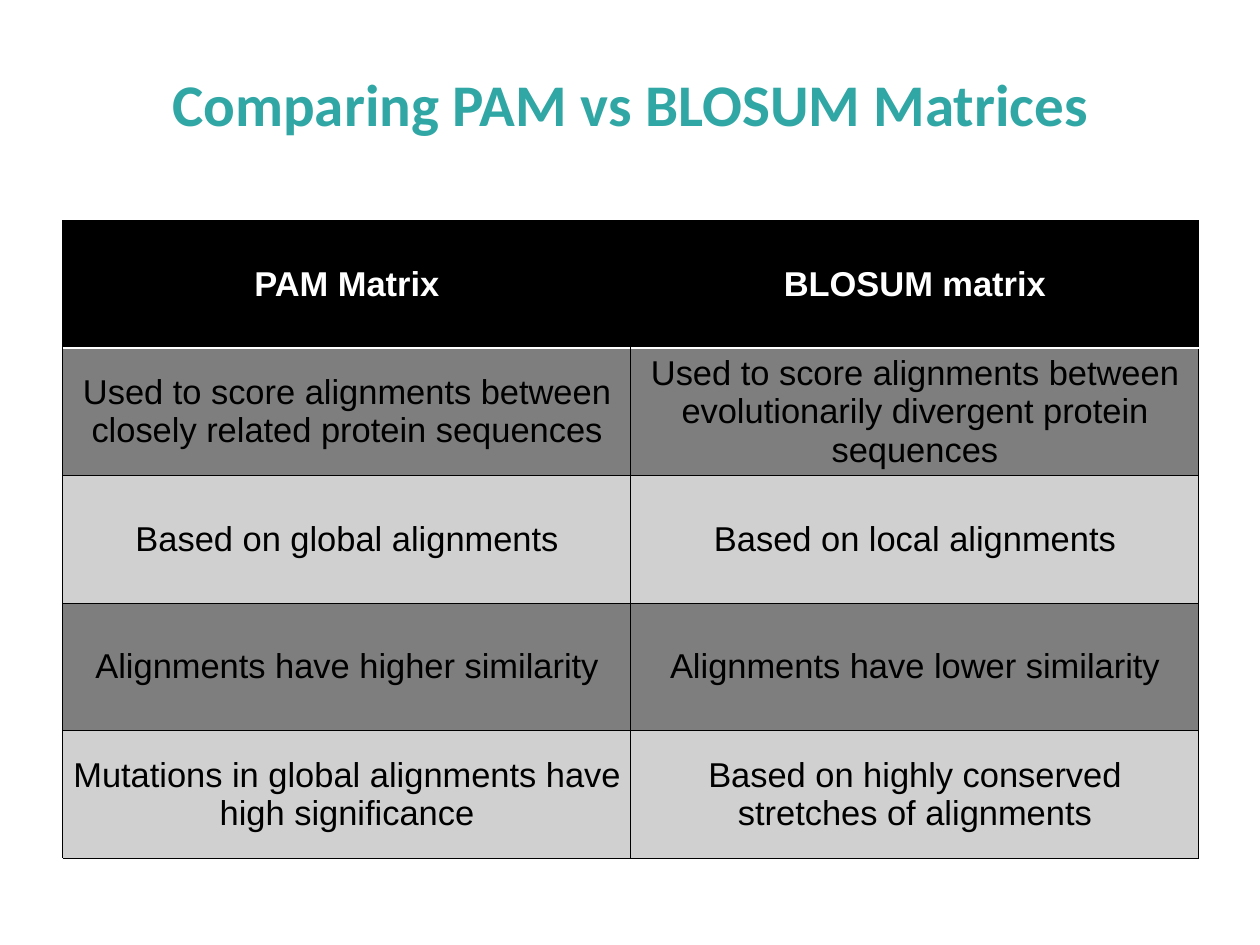
import pptx
import pptx.dml.color
import pptx.enum.text
import pptx.oxml.ns
import pptx.util
from lxml import etree

PX = 9144
COLORS = {
    "teal": "31A7A5",
    "black": "000000",
    "white": "FFFFFF",
    "dark_band": "7E7E7E",
    "light_band": "D0D0D0",
}
ROWS = [
    ("PAM Matrix", "BLOSUM matrix"),
    (
        "Used to score alignments between closely related protein sequences",
        "Used to score alignments between evolutionarily divergent protein sequences",
    ),
    ("Based on global alignments", "Based on local alignments"),
    ("Alignments have higher similarity", "Alignments have lower similarity"),
    (
        "Mutations in global alignments have high significance",
        "Based on highly conserved stretches of alignments",
    ),
]
COLUMN_WIDTH = 641
ROW_HEIGHT = 144


def px(length):
    return pptx.util.Emu(length * PX)


def rgb(name):
    return pptx.dml.color.RGBColor.from_string(COLORS[name])


def write_centred(frame, text, font, size, color, bold):
    frame.word_wrap = True
    para = frame.paragraphs[0]
    para.alignment = pptx.enum.text.PP_ALIGN.CENTER
    span = para.add_run()
    span.text = text
    span.font.name = font
    span.font.size = pptx.util.Pt(size)
    span.font.bold = bold
    span.font.color.rgb = rgb(color)


def add_title(page, text):
    title = page.shapes.title
    title.left, title.top, title.width, title.height = map(px, (71, 43, 1281, 146))
    frame = title.text_frame
    frame.margin_left = frame.margin_right = px(4)
    frame.margin_top = frame.margin_bottom = px(4)
    frame.vertical_anchor = pptx.enum.text.MSO_ANCHOR.MIDDLE
    frame.auto_size = pptx.enum.text.MSO_AUTO_SIZE.NONE
    write_centred(frame, text, "Calibri", 48, "teal", True)


def set_borders(cell, edges):
    properties = cell._tc.get_or_add_tcPr()
    for position, (edge, color, points) in enumerate(edges):
        line = etree.Element(pptx.oxml.ns.qn(f"a:ln{edge}"))
        line.set("w", str(pptx.util.Pt(points)))
        if color is None:
            etree.SubElement(line, pptx.oxml.ns.qn("a:noFill"))
        else:
            fill = etree.SubElement(line, pptx.oxml.ns.qn("a:solidFill"))
            etree.SubElement(fill, pptx.oxml.ns.qn("a:srgbClr"), val=COLORS[color])
        properties.insert(position, line)


def cell_edges(row, column):
    thin = ("black", 0.75)
    rule = ("white", 2)
    inner = (None, 0.75) if row == 0 else thin
    return [
        ("L", *(thin if column == 0 else inner)),
        ("R", *(inner if column == 0 else thin)),
        ("T", *(rule if row == 1 else thin)),
        ("B", *(rule if row == 0 else thin)),
    ]


def format_cell(cell, text, row, column):
    header = row == 0
    band = "black" if header else "dark_band" if row % 2 else "light_band"
    cell.fill.solid()
    cell.fill.fore_color.rgb = rgb(band)
    cell.vertical_anchor = pptx.enum.text.MSO_ANCHOR.MIDDLE
    write_centred(
        cell.text_frame, text, "Arial", 28, "white" if header else "black", header
    )
    set_borders(cell, cell_edges(row, column))


def add_comparison(page, rows):
    columns = len(rows[0])
    table = page.shapes.add_table(
        len(rows), columns, px(71), px(249),
        px(COLUMN_WIDTH * columns), px(ROW_HEIGHT * len(rows)),
    ).table
    table.horz_banding = False
    for row, texts in enumerate(rows):
        for column, text in enumerate(texts):
            format_cell(table.cell(row, column), text, row, column)


def main():
    deck = pptx.Presentation()
    deck.slide_width = px(1422)
    deck.slide_height = px(1067)
    page = deck.slides.add_slide(deck.slide_layouts.get_by_name("Title Only"))
    page.background.fill.solid()
    page.background.fill.fore_color.rgb = rgb("white")
    add_title(page, "Comparing PAM vs BLOSUM Matrices")
    add_comparison(page, ROWS)
    deck.save("out.pptx")


if __name__ == "__main__":
    main()
